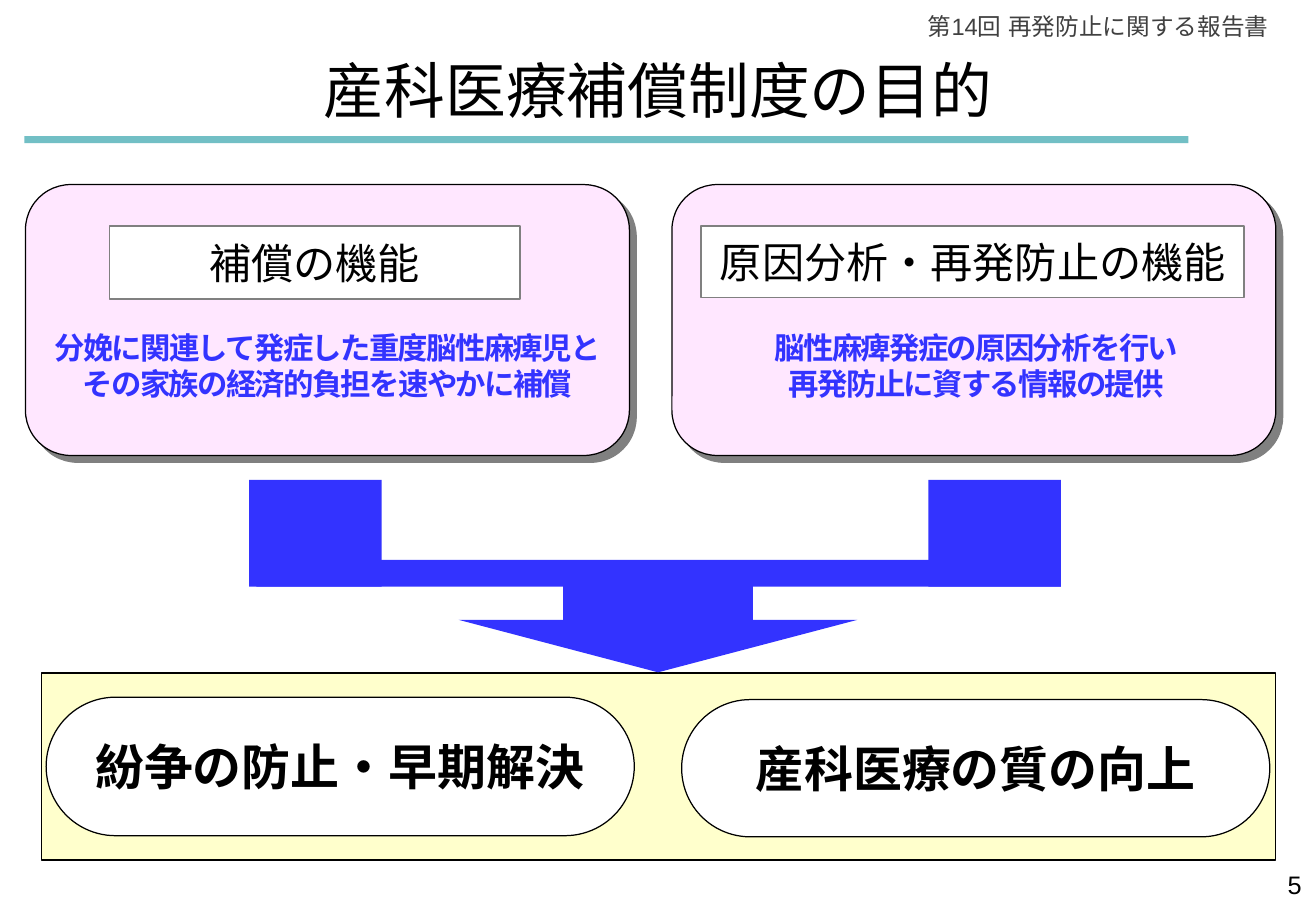
from lxml import etree
from pptx import Presentation
from pptx.dml.color import RGBColor
from pptx.enum import shapes, text
from pptx.oxml.ns import qn
from pptx.util import Inches, Pt

HUE = {"teal": "72BFC5", "pink": "FFE7FF", "cream": "FFFFCC", "blue": "3333FF",
       "white": "FFFFFF", "black": "000000", "gray": "808080", "dark": "404040"}
SANS, NOTO = "Arial", "Noto Sans CJK JP"
KIND = shapes.MSO_SHAPE
ALIGN = text.PP_ALIGN

HEAD = "第14回 再発防止に関する報告書"
TITLE = "産科医療補償制度の目的"
PAGE = "5"
# card left, label text and box, note lines and box
CARDS = [
    (5.53, "原因分析・再発防止の機能", (5.77, 1.86, 4.47, 0.59),
     ["脳性麻痺発症の原因分析を行い", "再発防止に資する情報の提供"], (5.8, 2.66, 4.47, 0.71)),
    (0.21, "補償の機能", (0.9, 1.86, 3.38, 0.6),
     ["分娩に関連して発症した重度脳性麻痺児と", "その家族の経済的負担を速やかに補償"],
     (0.21, 2.66, 4.97, 0.71)),
]
GOALS = [("紛争の防止・早期解決", (0.38, 5.74, 4.84, 1.14)),
         ("産科医療の質の向上", (5.61, 5.76, 4.84, 1.13))]
BARS = [(2.05, 3.95, 1.09, 0.88), (7.64, 3.95, 1.09, 0.88), (2.11, 4.61, 6.62, 0.22)]

deck = Presentation()
deck.slide_width, deck.slide_height = Inches(10.83), Inches(7.5)
slide = deck.slides.add_slide(deck.slide_layouts[6])


def color(name):
    return RGBColor.from_string(HUE[name])


def draw(kind, box, fill, line=None, width=0.75, adj=()):
    shape = slide.shapes.add_shape(kind, *map(Inches, box))
    shape.shadow.inherit = False
    shape.fill.solid()
    shape.fill.fore_color.rgb = color(fill)
    if line:
        shape.line.color.rgb = color(line)
        shape.line.width = Pt(width)
    else:
        shape.line.fill.background()
    for i, value in enumerate(adj):
        shape.adjustments[i] = value
    return shape


def write(shape, lines, size, hue="black", face=SANS, align=ALIGN.CENTER,
          bold=False, wrap=True, middle=True, gap=0):
    """Fill a shape with one paragraph per line; gap is letter spacing in points."""
    frame = shape.text_frame
    frame.word_wrap = wrap
    frame.vertical_anchor = text.MSO_ANCHOR.MIDDLE if middle else text.MSO_ANCHOR.TOP
    for i, line in enumerate(lines):
        para = frame.add_paragraph() if i else frame.paragraphs[0]
        para.alignment = align
        run = para.add_run()
        run.text = line
        font = run.font
        font.size, font.bold, font.name = Pt(size), bold, face
        font.color.rgb = color(hue)
        props = run._r.get_or_add_rPr()
        etree.SubElement(props, qn("a:ea")).set("typeface", face)
        if gap:
            props.set("spc", str(gap * 100))


def label(box, lines, size, **style):
    write(slide.shapes.add_textbox(*map(Inches, box)), lines, size, **style)


def shade(shape):
    """Give the shape a hard gray shadow to the lower right."""
    effects = shape._element.spPr.find(qn("a:effectLst"))
    drop = etree.SubElement(effects, qn("a:outerShdw"), dist=str(Pt(5.7)),
                            dir="2700000", algn="ctr", rotWithShape="0")
    etree.SubElement(drop, qn("a:srgbClr"), val=HUE["gray"])


draw(KIND.RECTANGLE, (0.2, 1.12, 9.58, 0.06), "teal")
label((7.38, 0.05, 3.16, 0.34), [HEAD], 14, hue="dark", align=ALIGN.RIGHT, middle=False)
label((2.53, 0.38, 5.77, 0.71), [TITLE], 36, face=NOTO, wrap=False)

draw(KIND.ROUNDED_RECTANGLE, (0.34, 5.54, 10.16, 1.54), "cream", "black", adj=[0])
for goal, box in GOALS:
    pill = draw(KIND.ROUNDED_RECTANGLE, box, "white", "black", adj=[0.5])
    write(pill, [goal], 29, bold=True)

for left, name, box, note, area in CARDS:
    shade(draw(KIND.ROUNDED_RECTANGLE, (left, 1.52, 4.97, 2.23), "pink", "black", adj=[0.167]))
    write(draw(KIND.RECTANGLE, box, "white", "gray", 1), [name], 25, face=NOTO, wrap=False)
    label(area, note, 18, hue="blue", bold=True, middle=False, gap=-1)

for bar in BARS:
    draw(KIND.RECTANGLE, bar, "blue")
arrow = draw(KIND.RIGHT_ARROW, (5.06, 3.54, 0.71, 3.28), "blue", adj=[0.476, 0.608])
arrow.rotation = 90

label((8.28, 7.11, 2.53, 0.52), [PAGE], 15, align=ALIGN.RIGHT, middle=False)

deck.save("out.pptx")
